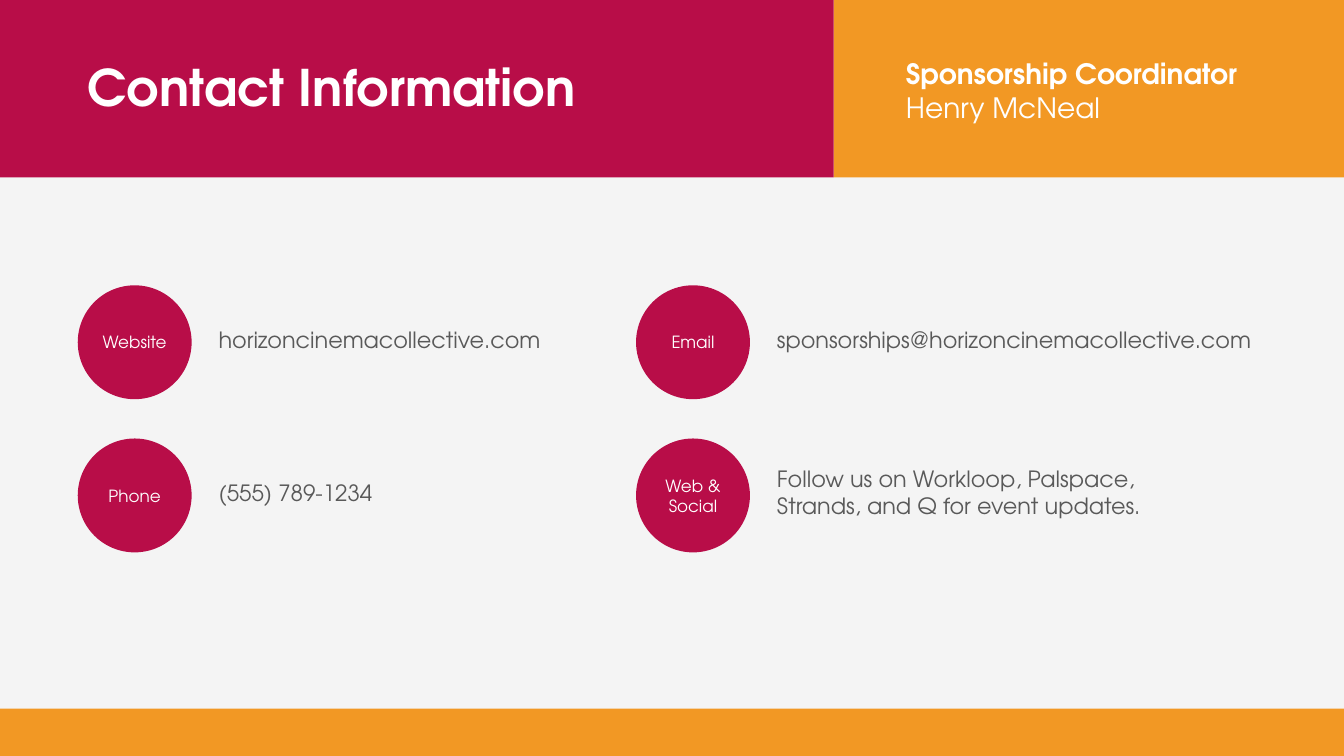
from pptx import Presentation
from pptx.dml.color import RGBColor
from pptx.enum.shapes import MSO_SHAPE as Shape
from pptx.enum.text import MSO_ANCHOR as Anchor, MSO_AUTO_SIZE as AutoSize, PP_ALIGN as Align
from pptx.util import Cm, Pt

COLORS = {"crimson": "B80D48", "orange": "F29824", "paper": "F4F4F4",
          "gray": "595959", "white": "FFFFFF"}
FONT = "TeX Gyre Adventor"
SLIDE_W, SLIDE_H = 33.87, 19.05
HEADER_H, HEADER_SPLIT = 4.47, 21.01
FOOTER_H = 1.19
CIRCLE = 2.87
GRID_LEFT, GRID_TOP = 1.96, 7.19
COLUMN_STEP, ROW_STEP = 14.07, 3.86
DETAIL_OFFSET = 3.3
DETAIL_RISE = 0.07

# column, row, label, detail, detail width, detail height
CONTACTS = [
    (0, 0, "Website", "horizoncinemacollective.com", 9.04, 0.94),
    (1, 0, "Email", "sponsorships@horizoncinemacollective.com", 13.1, 0.94),
    (0, 1, "Phone", "(555) 789-1234", 6.88, 0.94),
    (1, 1, "Web & Social",
     "Follow us on Workloop, Palspace, Strands, and Q for event updates.", 11.05, 1.63),
]


def rgb(name):
    return RGBColor.from_string(COLORS[name])


def write(paragraph, text, size=16, color="white", bold=False, align=Align.LEFT):
    paragraph.alignment = align
    run = paragraph.add_run()
    run.text = text
    run.font.name = FONT
    run.font.size = Pt(size)
    run.font.bold = bold
    run.font.color.rgb = rgb(color)


class ContactSlide:
    def __init__(self, slide):
        self.slide = slide
        slide.background.fill.solid()
        slide.background.fill.fore_color.rgb = rgb("paper")

    def filled(self, kind, left, top, width, height, color):
        shape = self.slide.shapes.add_shape(kind, Cm(left), Cm(top), Cm(width), Cm(height))
        shape.shadow.inherit = False
        shape.fill.solid()
        shape.fill.fore_color.rgb = rgb(color)
        shape.line.fill.background()
        return shape

    def band(self, left, top, width, height, color):
        self.filled(Shape.RECTANGLE, left, top, width, height, color)

    def circle(self, left, top, label):
        frame = self.filled(Shape.OVAL, left, top, CIRCLE, CIRCLE, "crimson").text_frame
        frame.margin_left = frame.margin_right = 0
        frame.word_wrap = True
        frame.vertical_anchor = Anchor.MIDDLE
        write(frame.paragraphs[0], label, size=12, align=Align.CENTER)

    def text(self, left, top, width, height, *lines):
        """Each line is a pair of its text and its format."""
        box = self.slide.shapes.add_textbox(Cm(left), Cm(top), Cm(width), Cm(height))
        frame = box.text_frame
        frame.word_wrap = True
        frame.auto_size = AutoSize.SHAPE_TO_FIT_TEXT
        for index, (line, style) in enumerate(lines):
            paragraph = frame.add_paragraph() if index else frame.paragraphs[0]
            write(paragraph, line, **style)

    def contact(self, column, row, label, detail, width, height):
        left = GRID_LEFT + column * COLUMN_STEP
        top = GRID_TOP + row * ROW_STEP
        self.circle(left, top, label)
        self.text(left + DETAIL_OFFSET, top + (CIRCLE - height) / 2 - DETAIL_RISE,
                  width, height, (detail, {"color": "gray"}))


def main():
    deck = Presentation()
    deck.slide_width, deck.slide_height = Cm(SLIDE_W), Cm(SLIDE_H)
    page = ContactSlide(deck.slides.add_slide(deck.slide_layouts[6]))

    page.band(HEADER_SPLIT, 0, SLIDE_W - HEADER_SPLIT, HEADER_H, "orange")
    page.band(0, 0, HEADER_SPLIT, HEADER_H, "crimson")
    page.band(0, SLIDE_H - FOOTER_H, SLIDE_W, FOOTER_H, "orange")

    page.text(GRID_LEFT, 1.3, 14.38, 1.8,
              ("Contact Information", {"size": 36, "bold": True}))
    page.text(22.58, 1.3, 10, 1.96,
              ("Sponsorship Coordinator", {"size": 20, "bold": True}),
              ("Henry McNeal", {"size": 20}))

    for entry in CONTACTS:
        page.contact(*entry)

    deck.save("out.pptx")


if __name__ == "__main__":
    main()
